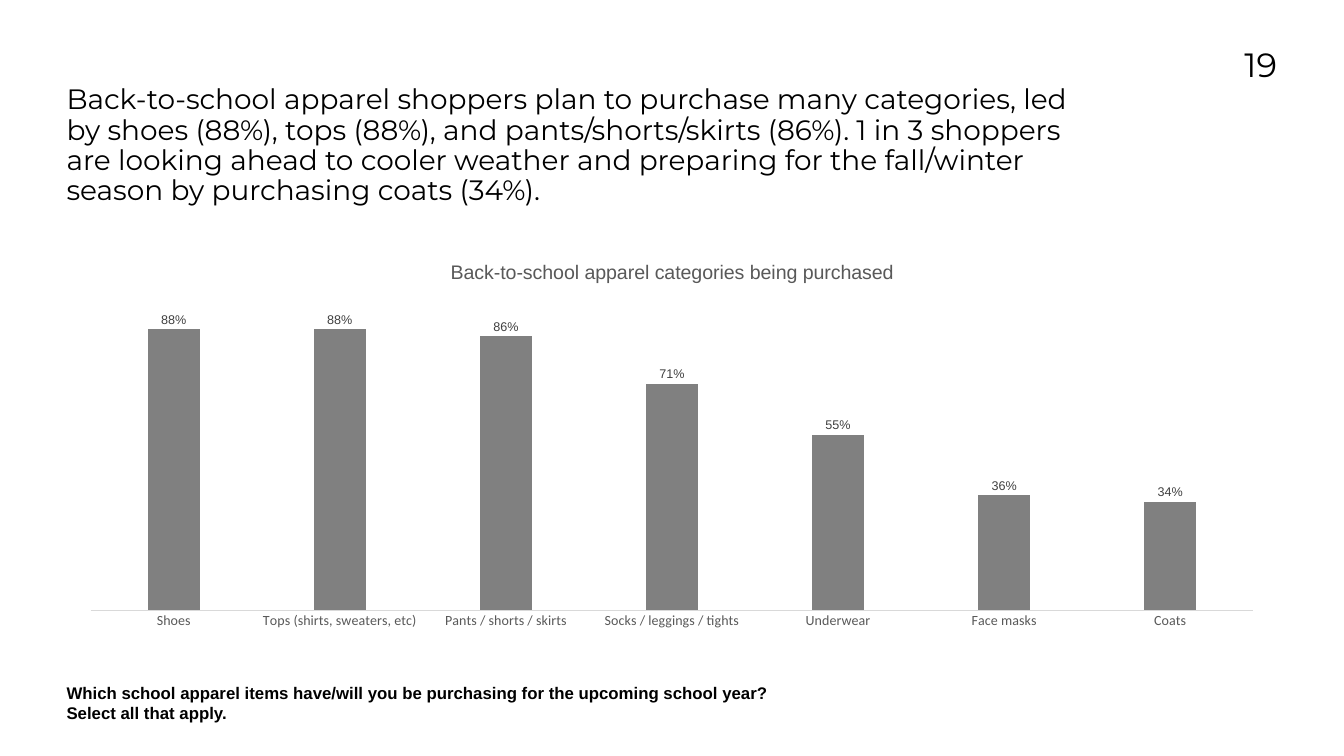
import pptx
import pptx.chart.data
import pptx.dml.color
import pptx.enum.chart
import pptx.enum.text
import pptx.oxml
import pptx.oxml.ns
import pptx.util

Inches = pptx.util.Inches
RGBColor = pptx.dml.color.RGBColor
Align = pptx.enum.text.PP_ALIGN

BLACK = RGBColor(0x00, 0x00, 0x00)
LABEL_GREY = RGBColor(0x40, 0x40, 0x40)
TEXT_GREY = RGBColor(0x59, 0x59, 0x59)
BAR_GREY = RGBColor(0x80, 0x80, 0x80)
AXIS_GREY = RGBColor(0xD9, 0xD9, 0xD9)

MARGIN = Inches(1.32)
PURCHASES = {
    "Shoes": 0.88,
    "Tops (shirts, sweaters, etc)": 0.88,
    "Pants / shorts / skirts": 0.86,
    "Socks / leggings / tights": 0.71,
    "Underwear": 0.55,
    "Face masks": 0.36,
    "Coats": 0.34,
}


def format_font(font, name, size, color, bold=False):
    font.name = name
    font.size = pptx.util.Pt(size)
    font.color.rgb = color
    font.bold = bold


def write_text(frame, text, name="Arial", size=24, color=BLACK, bold=False,
               align=Align.LEFT, line_spacing=1.0):
    frame.margin_left = frame.margin_right = 0
    frame.margin_top = frame.margin_bottom = 0
    frame.word_wrap = True
    frame.auto_size = pptx.enum.text.MSO_AUTO_SIZE.NONE
    frame.vertical_anchor = pptx.enum.text.MSO_ANCHOR.TOP
    frame.text = text
    paragraph = frame.paragraphs[0]
    paragraph.alignment = align
    paragraph.line_spacing = line_spacing
    paragraph.space_before = 0
    format_font(paragraph.runs[0].font, name, size, color, bold)


class SlideBuilder:
    heading_font = "Montserrat"
    body_font = "Arial"
    axis_font = "Calibri"

    def __init__(self, slide):
        self.slide = slide

    def headline(self, text, left, top, width, height):
        title = self.slide.shapes.title
        title.left, title.top, title.width, title.height = left, top, width, height
        write_text(title.text_frame, text, name=self.heading_font, size=40,
                   line_spacing=0.9)

    def text(self, text, left, top, width, height, **style):
        box = self.slide.shapes.add_textbox(left, top, width, height)
        write_text(box.text_frame, text, **style)

    def column_chart(self, title, values, left, top, width, height):
        data = pptx.chart.data.CategoryChartData(number_format="0%")
        data.categories = list(values)
        data.add_series("Series 1", list(values.values()))
        chart = self.slide.shapes.add_chart(
            pptx.enum.chart.XL_CHART_TYPE.COLUMN_CLUSTERED,
            left, top, width, height, data).chart
        format_font(chart.font, self.axis_font, 10, BLACK)
        chart.has_legend = False

        # Chart title
        chart.has_title = True
        chart.chart_title.text_frame.text = title
        title_run = chart.chart_title.text_frame.paragraphs[0].runs[0]
        format_font(title_run.font, self.body_font, 28, TEXT_GREY)

        # Axes
        categories = chart.category_axis
        categories.major_tick_mark = pptx.enum.chart.XL_TICK_MARK.NONE
        categories.format.line.color.rgb = AXIS_GREY
        categories.format.line.width = pptx.util.Pt(0.75)
        format_font(categories.tick_labels.font, self.axis_font, 20, TEXT_GREY)
        chart.value_axis.minimum_scale = 0
        chart.value_axis.maximum_scale = 1
        chart.value_axis.has_major_gridlines = False
        chart.value_axis.visible = False

        # Bars and their labels
        plot = chart.plots[0]
        plot.gap_width = 219
        plot.overlap = -27
        plot.vary_by_categories = False
        bars = plot.series[0]
        bars.format.fill.solid()
        bars.format.fill.fore_color.rgb = BAR_GREY
        labels = bars.data_labels
        labels.show_value = True
        labels.position = pptx.enum.chart.XL_LABEL_POSITION.OUTSIDE_END
        labels.number_format = "0%"
        labels.number_format_is_linked = False
        format_font(labels.font, self.body_font, 18, LABEL_GREY)
        self.place_plot(chart, x=0.02, y=0.115, w=0.96, h=0.815)

    def place_plot(self, chart, **fractions):
        area = chart.plots[0]._element.getparent()
        for old in area.findall(pptx.oxml.ns.qn("c:layout")):
            area.remove(old)
        settings = {"layoutTarget": "inner", "xMode": "edge", "yMode": "edge",
                    **fractions}
        items = "".join(f'<c:{key} val="{value}"/>'
                        for key, value in settings.items())
        area.insert(0, pptx.oxml.parse_xml(
            f'<c:layout {pptx.oxml.ns.nsdecls("c")}>'
            f"<c:manualLayout>{items}</c:manualLayout></c:layout>"))


def main():
    deck = pptx.Presentation()
    deck.slide_width, deck.slide_height = Inches(26.67), Inches(15)
    builder = SlideBuilder(deck.slides.add_slide(deck.slide_layouts[5]))

    # Headline
    builder.headline(
        "Back-to-school apparel shoppers plan to purchase many categories, "
        "led by shoes (88%), tops (88%), and pants/shorts/skirts (86%). "
        "1 in 3 shoppers are looking ahead to cooler weather and preparing "
        "for the fall/winter season by purchasing coats (34%).",
        MARGIN, Inches(1.7), Inches(20.44), Inches(3.17))

    # Purchase shares by category
    builder.column_chart("Back-to-school apparel categories being purchased",
                         PURCHASES, MARGIN, Inches(4.88),
                         Inches(24.03), Inches(7.77))

    # Survey question and page number
    builder.text("Which school apparel items have/will you be purchasing for "
                 "the upcoming school year? Select all that apply.",
                 MARGIN, Inches(13.55), Inches(14.18), Inches(0.67), bold=True)
    builder.text("19", Inches(23.09), Inches(0.88), Inches(2.25), Inches(1.64),
                 name=builder.heading_font, size=48, align=Align.RIGHT)

    deck.save("out.pptx")


if __name__ == "__main__":
    main()
